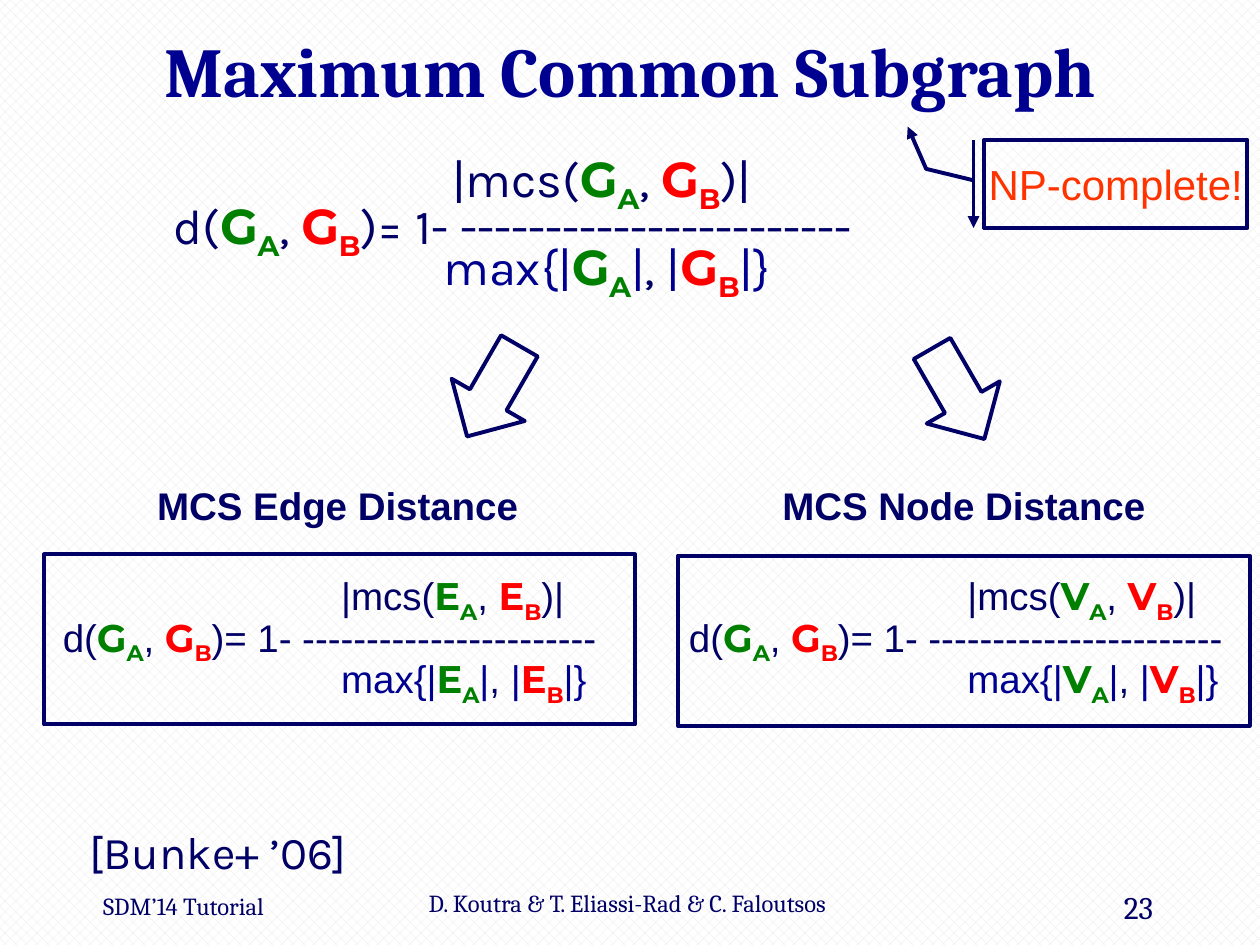
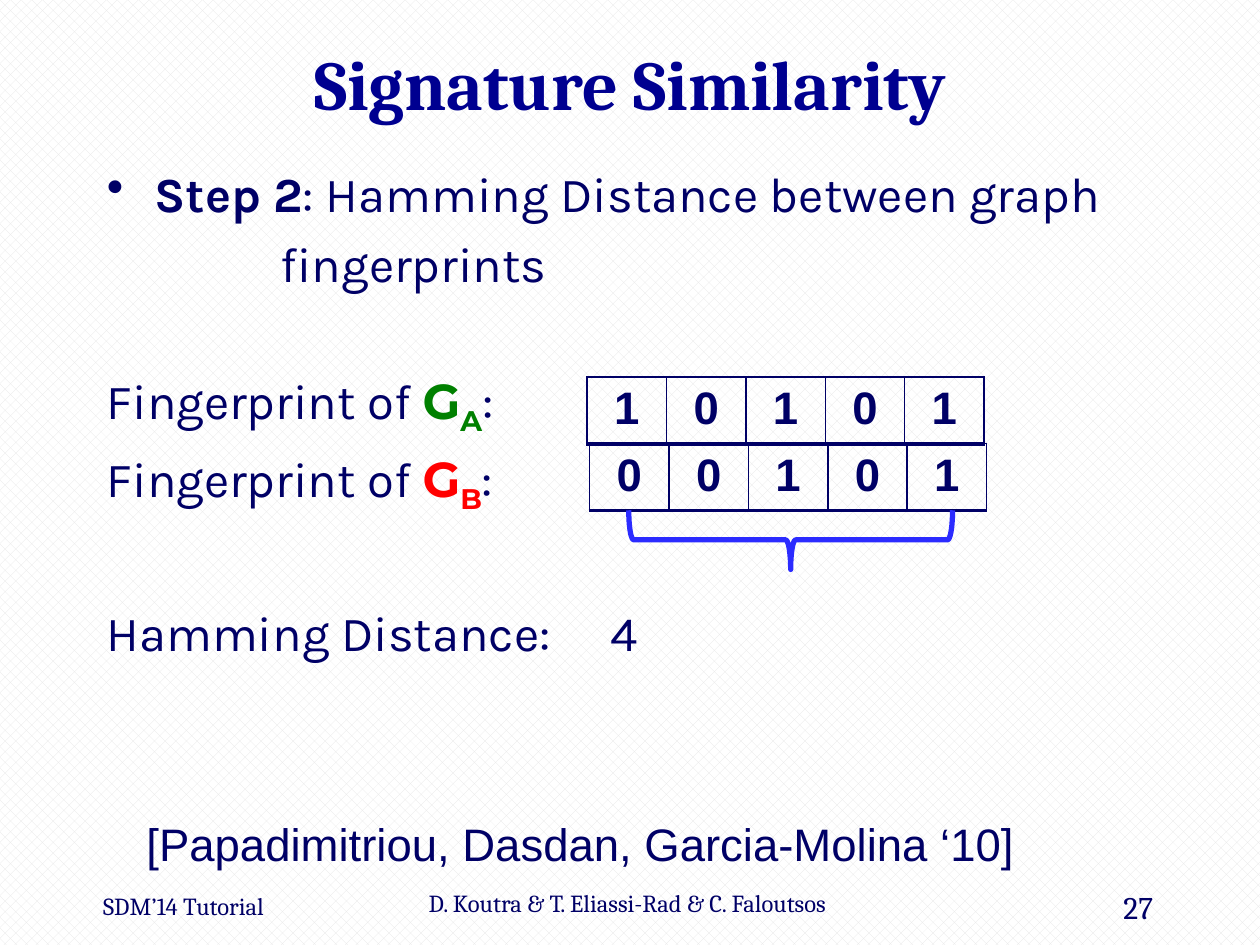
from dataclasses import dataclass

from lxml.etree import SubElement
from pptx import Presentation
from pptx.dml.color import RGBColor
from pptx.enum.dml import MSO_PATTERN
from pptx.enum.shapes import MSO_SHAPE
from pptx.enum.text import MSO_ANCHOR, MSO_AUTO_SIZE, PP_ALIGN
from pptx.oxml.ns import qn
from pptx.util import Inches, Pt


@dataclass(frozen=True)
class Theme:
    ink: str = "000066"
    navy: str = "000090"
    green: str = "008000"
    red: str = "FF0000"
    alert: str = "FF3300"
    brace: str = "2B2BFF"
    paper: str = "FFFFFF"
    weave: str = "E6E6E6"
    serif: str = "Cambria"
    sans: str = "Arial"
    body: str = "Karla"
    symbol: str = "Montserrat"
    title_size: int = 40
    body_size: int = 28
    cite_size: int = 26
    callout_size: int = 24
    formula_size: int = 22
    number_size: int = 18
    footer_size: int = 14
    line: float = 2.25
    formula_pitch: float = 23.6


T = Theme()
GRAPHS = {"A": T.green, "B": T.red}


def rgb(color):
    return RGBColor.from_string(color)


def add_text(p, text, font=T.body, size=T.body_size, color=T.ink, bold=False, sub=False):
    r = p.add_run()
    r.text = text
    r.font.name = font
    r.font.size = Pt(size)
    r.font.bold = bold
    r.font.color.rgb = rgb(color)
    if sub:
        r._r.get_or_add_rPr().set("baseline", "-25000")
    return r


def add_symbol(p, letter, graph, size):
    fmt = dict(font=T.symbol, size=size, color=GRAPHS[graph], bold=True)
    add_text(p, letter, **fmt)
    add_text(p, graph, sub=True, **fmt)


def add_pair(p, letter, before, between, after, size, bar_color=T.ink, font=T.body):
    fmt = dict(font=font, size=size, color=bar_color)
    add_text(p, before, **fmt)
    add_symbol(p, letter, "A", size)
    closing, comma, opening = between
    if closing:
        add_text(p, closing, **fmt)
    add_text(p, comma, font=font, size=size)
    if opening:
        add_text(p, opening, **fmt)
    add_symbol(p, letter, "B", size)
    add_text(p, after, **fmt)


def next_paragraph(tf, before=0, after=0, indent=0.0, hang=0.0, pitch=None):
    p = tf.paragraphs[0] if not tf.paragraphs[0].runs else tf.add_paragraph()
    if before:
        p.space_before = Pt(before)
    if after:
        p.space_after = Pt(after)
    if pitch:
        p.line_spacing = Pt(pitch)
    pPr = p._p.get_or_add_pPr()
    pPr.set("marL", str(Inches(indent)))
    pPr.set("indent", str(-Inches(hang)))
    return p


def add_bullet(p):
    SubElement(p._p.get_or_add_pPr(), qn("a:buChar"), char="•")


def add_tab(p, pos):
    tabs = SubElement(p._p.get_or_add_pPr(), qn("a:tabLst"))
    SubElement(tabs, qn("a:tab"), pos=str(Inches(pos)), algn="l")


class Deck:
    def __init__(self):
        self.prs = Presentation()
        self.prs.slide_width = Inches(10)
        self.prs.slide_height = Inches(7.5)
        fill = self.prs.slide_master.background.fill
        fill.patterned()
        fill.pattern = MSO_PATTERN.from_xml("pct40")
        fill.fore_color.rgb = rgb(T.weave)
        fill.back_color.rgb = rgb(T.paper)
        self.s = None

    def slide(self, title, number, title_top):
        self.s = self.prs.slides.add_slide(self.prs.slide_layouts[5])
        sp = self.s.shapes.title
        sp.left, sp.top = Inches(0.75), Inches(title_top)
        sp.width, sp.height = Inches(8.5), Inches(0.75)
        tf = sp.text_frame
        tf.auto_size = MSO_AUTO_SIZE.NONE
        tf.vertical_anchor = MSO_ANCHOR.MIDDLE
        p = tf.paragraphs[0]
        p.alignment = PP_ALIGN.CENTER
        add_text(p, title, font=T.serif, size=T.title_size, color=T.navy, bold=True)
        footer = dict(font=T.serif, size=T.footer_size)
        self.label("SDM’14 Tutorial", 0.72, 7.02, 2.08, 0.42, PP_ALIGN.LEFT, **footer)
        self.label("D. Koutra & T. Eliassi-Rad & C. Faloutsos", 3.1, 7, 3.76, 0.42, **footer)
        self.label(number, 7.17, 7, 2.08, 0.42, PP_ALIGN.RIGHT, font=T.serif, size=T.number_size)

    def box(self, x, y, w, h):
        tf = self.s.shapes.add_textbox(Inches(x), Inches(y), Inches(w), Inches(h)).text_frame
        tf.word_wrap = True
        return tf

    def label(self, text, x, y, w, h, align=PP_ALIGN.CENTER, **fmt):
        tf = self.box(x, y, w, h)
        p = tf.paragraphs[0]
        p.alignment = align
        add_text(p, text, **fmt)
        return tf

    def shape(self, kind, x, y, w, h, color=T.ink, weight=T.line, rotation=0):
        sp = self.s.shapes.add_shape(kind, Inches(x), Inches(y), Inches(w), Inches(h))
        sp.shadow.inherit = False
        sp.fill.background()
        sp.line.color.rgb = rgb(color)
        sp.line.width = Pt(weight)
        sp.rotation = rotation
        return sp

    def callout(self, text, x, y, w, h, adjustments):
        sp = self.shape(MSO_SHAPE.LINE_CALLOUT_2_BORDER_AND_ACCENT_BAR, x, y, w, h)
        for i, value in enumerate(adjustments):
            sp.adjustments[i] = value
        SubElement(sp.line._get_or_add_ln(), qn("a:tailEnd"), type="triangle")
        tf = sp.text_frame
        tf.word_wrap = False
        tf.vertical_anchor = MSO_ANCHOR.MIDDLE
        p = tf.paragraphs[0]
        p.alignment = PP_ALIGN.CENTER
        add_text(p, text, font=T.sans, size=T.callout_size, color=T.alert)

    def formula(self, tf, letter, indents, font, size, before=0, after=0):
        top, middle, bottom = indents
        fmt = dict(size=size, font=font)
        p = next_paragraph(tf, before, after, indent=top)
        add_pair(p, letter, "|mcs(", ("", ", ", ""), ")|", **fmt)
        p = next_paragraph(tf, indent=middle, pitch=T.formula_pitch)
        add_pair(p, "G", "d(", ("", ", ", ""), ")= 1- " + "-" * 23, **fmt)
        p = next_paragraph(tf, indent=bottom, pitch=T.formula_pitch)
        add_pair(p, letter, "max{|", ("|", ", ", "|"), "|}", bar_color=T.navy, **fmt)

    def bits(self, values, x, y, col=0.63, row=0.41):
        n = len(values)
        frame = self.s.shapes.add_table(1, n, Inches(x), Inches(y), Inches(col * n), Inches(row))
        table = frame.table
        table.first_row = table.horz_banding = False
        table.rows[0].height = Inches(row)
        for i, value in enumerate(values):
            table.columns[i].width = Inches(col)
            cell = table.cell(0, i)
            tcPr = cell._tc.get_or_add_tcPr()
            for side, weight in (("L", 1), ("R", 1), ("T", 1), ("B", 2)):
                ln = SubElement(tcPr, qn("a:ln" + side), w=str(Pt(weight)))
                SubElement(SubElement(ln, qn("a:solidFill")), qn("a:srgbClr"), val=T.ink)
            cell.fill.background()
            p = cell.text_frame.paragraphs[0]
            p.alignment = PP_ALIGN.CENTER
            add_text(p, value, font=T.sans, size=T.cite_size, bold=True)


def subgraph_slide(deck):
    deck.slide("Maximum Common Subgraph", "23", 0.18)
    deck.label("[Bunke+ ’06]", 0.31, 6.49, 2.84, 0.54, size=T.cite_size)
    deck.formula(deck.box(0.75, 1.13, 8.5, 1.4), "G", (2.74, 0.53, 2.67),
                 T.body, T.body_size, after=3)
    deck.callout("NP-complete!", 7.81, 1.11, 2.09, 0.7, (0.46, -0.04, 0.33, -0.22, -0.15, -0.29))

    for heading, letter, x in (("MCS Edge Distance", "E", 0.18), ("MCS Node Distance", "V", 5.15)):
        tf = deck.label(heading, x, 3.78, 5, 2.24, font=T.sans, size=T.formula_size, bold=True)
        deck.formula(tf, letter, (2.43, 0.22, 2.43), T.sans, T.formula_size, before=25)

    for x, y, rotation in ((3.58, 2.69, 30), (7.27, 2.71, 330)):
        deck.shape(MSO_SHAPE.DOWN_ARROW, x, y, 0.67, 0.83, rotation=rotation)
    for x, y, w in ((0.35, 4.4, 4.69), (5.38, 4.41, 4.54)):
        deck.shape(MSO_SHAPE.RECTANGLE, x, y, w, 1.35)


def signature_slide(deck):
    deck.slide("Signature Similarity", "27", 0.28)
    deck.label("[Papadimitriou, Dasdan, Garcia-Molina ‘10]", 0.75, 6.43, 7.72, 0.54,
               font=T.sans, size=T.cite_size)

    tf = deck.box(0.75, 1.25, 8.5, 5.1)
    p = next_paragraph(tf, after=3, indent=0.38, hang=0.38)
    add_bullet(p)
    add_text(p, "Step 2", bold=True)
    add_text(p, ": Hamming Distance between graph")
    add_text(next_paragraph(tf, before=3, after=3, indent=1.38), "fingerprints")
    for graph, before in (("A", 42), ("B", 3)):
        p = next_paragraph(tf, before=before, after=3)
        add_text(p, "Fingerprint of ")
        add_symbol(p, "G", graph, T.body_size)
        add_text(p, ":")
    p = next_paragraph(tf, before=47)
    add_tab(p, 4.98)
    add_text(p, "Hamming Distance:\t4")

    deck.bits("10101", 4.66, 2.99)
    deck.bits("00101", 4.68, 3.52)
    deck.shape(MSO_SHAPE.RIGHT_BRACE, 6.04, 3, 0.47, 2.57, color=T.brace, weight=3, rotation=90)


def main():
    deck = Deck()
    subgraph_slide(deck)
    signature_slide(deck)
    deck.prs.save("out.pptx")


if __name__ == "__main__":
    main()
